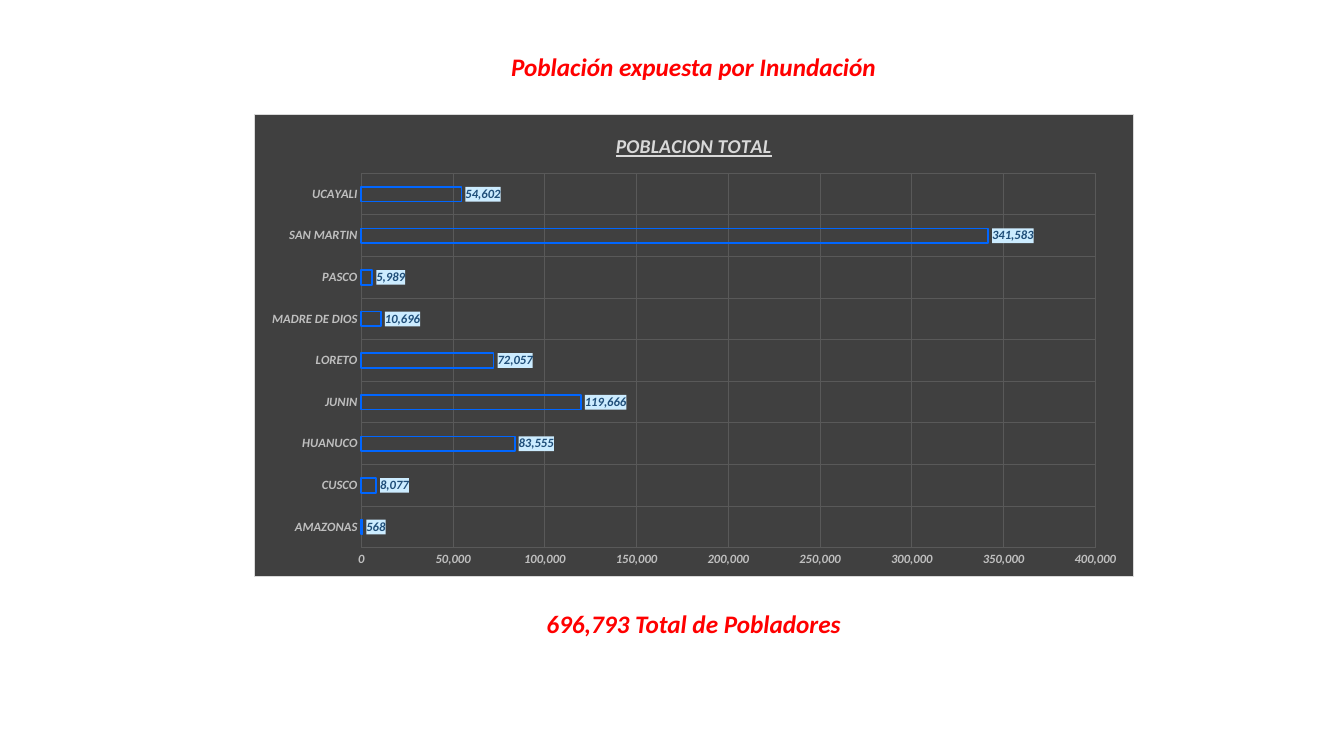
from lxml.etree import fromstring
from pptx import Presentation
from pptx.chart.data import CategoryChartData
from pptx.dml.color import RGBColor
from pptx.enum.chart import XL_CHART_TYPE, XL_LABEL_POSITION, XL_TICK_MARK
from pptx.enum.text import MSO_AUTO_SIZE, PP_ALIGN
from pptx.oxml.ns import qn
from pptx.util import Inches, Pt

HEADING = "Población expuesta por Inundación"
TOTAL = "696,793 Total de Pobladores"
CHART_TITLE = "POBLACION TOTAL"
POPULATION = {
    "AMAZONAS": 568,
    "CUSCO": 8077,
    "HUANUCO": 83555,
    "JUNIN": 119666,
    "LORETO": 72057,
    "MADRE DE DIOS": 10696,
    "PASCO": 5989,
    "SAN MARTIN": 341583,
    "UCAYALI": 54602,
}
COLORS = {
    "caption": "FF0000",
    "panel": "404040",
    "border": "D9D9D9",
    "title": "D9D9D9",
    "axis": "BFBFBF",
    "grid": "595959",
    "bar": "0066FF",
    "label": "1F4E79",
    "label_fill": "CCECFF",
}
FONT = "Calibri"
NUMBER_FORMAT = "#,##0"
WIDTH, HEIGHT = 13.33, 7.5
CENTER = 6.88
CHART_TOP, CHART_WIDTH, CHART_HEIGHT = 1.13, 8.73, 4.59
CAPTION_HEIGHT = 0.4
CAPTIONS = [(HEADING, 0.46, 3.86, False), (TOTAL, 5.99, 3.36, True)]
PLOT_SHARES = {"x": 0.122, "y": 0.128, "w": 0.835, "h": 0.811}
NAMESPACES = (
    'xmlns:c="http://schemas.openxmlformats.org/drawingml/2006/chart" '
    'xmlns:a="http://schemas.openxmlformats.org/drawingml/2006/main"'
)


def color(name):
    return RGBColor.from_string(COLORS[name])


def style_font(font, size, name):
    font.name = FONT
    font.size = Pt(size)
    font.bold = font.italic = True
    font.color.rgb = color(name)


def solid(name):
    return f'<a:solidFill><a:srgbClr val="{COLORS[name]}"/></a:solidFill>'


def area_format(fill, line=""):
    return fromstring(f"<c:spPr {NAMESPACES}>{solid(fill)}{line}</c:spPr>")


def add_caption(slide, words, top, width, wrap):
    box = slide.shapes.add_textbox(
        Inches(CENTER - width / 2), Inches(top), Inches(width), Inches(CAPTION_HEIGHT)
    )
    frame = box.text_frame
    frame.word_wrap = wrap
    frame.auto_size = MSO_AUTO_SIZE.SHAPE_TO_FIT_TEXT
    paragraph = frame.paragraphs[0]
    paragraph.alignment = PP_ALIGN.CENTER
    run = paragraph.add_run()
    run.text = words
    style_font(run.font, 18, "caption")


def style_axis(axis):
    axis.major_tick_mark = axis.minor_tick_mark = XL_TICK_MARK.NONE
    axis.format.line.fill.background()
    axis.has_major_gridlines = True
    grid = axis.major_gridlines.format.line
    grid.color.rgb = color("grid")
    grid.width = Pt(0.75)
    style_font(axis.tick_labels.font, 9, "axis")


def set_plot_area(chart):
    plot_area = chart.plots[0]._element.getparent()
    for layout in plot_area.findall(qn("c:layout")):
        plot_area.remove(layout)
    shares = "".join(f'<c:{key} val="{share}"/>' for key, share in PLOT_SHARES.items())
    plot_area.insert(0, fromstring(
        f'<c:layout {NAMESPACES}><c:manualLayout><c:layoutTarget val="inner"/>'
        f'<c:xMode val="edge"/><c:yMode val="edge"/>{shares}</c:manualLayout></c:layout>'
    ))


def add_population_chart(slide):
    data = CategoryChartData(number_format=NUMBER_FORMAT)
    data.categories = list(POPULATION)
    data.add_series("Series 1", list(POPULATION.values()))
    chart = slide.shapes.add_chart(
        XL_CHART_TYPE.BAR_CLUSTERED, Inches(CENTER - CHART_WIDTH / 2), Inches(CHART_TOP),
        Inches(CHART_WIDTH), Inches(CHART_HEIGHT), data
    ).chart
    chart.has_legend = False
    chart.font.name, chart.font.size = FONT, Pt(10)
    chart.has_title = True
    title = chart.chart_title.text_frame.paragraphs[0].add_run()
    title.text = CHART_TITLE
    style_font(title.font, 14, "title")
    title.font.underline = True

    style_axis(chart.category_axis)
    style_axis(chart.value_axis)
    scale = chart.value_axis
    scale.minimum_scale, scale.maximum_scale, scale.major_unit = 0, 400000, 50000
    scale.tick_labels.number_format = NUMBER_FORMAT
    scale.tick_labels.number_format_is_linked = False

    plot = chart.plots[0]
    plot.vary_by_categories = False
    plot.gap_width, plot.overlap = 182, -50
    bars = plot.series[0]
    bars.invert_if_negative = False
    bars.format.fill.background()
    bars.format.line.color.rgb = color("bar")
    bars.format.line.width = Pt(1.25)

    labels = bars.data_labels
    labels.show_value = True
    labels.position = XL_LABEL_POSITION.OUTSIDE_END
    labels.number_format = NUMBER_FORMAT
    labels.number_format_is_linked = False
    style_font(labels.font, 9, "label")
    labels._element.find(qn("c:txPr")).addprevious(area_format("label_fill"))

    border = f'<a:ln w="{Pt(0.75)}">{solid("border")}</a:ln>'
    chart._chartSpace.find(qn("c:txPr")).addprevious(area_format("panel", border))
    set_plot_area(chart)


def main():
    deck = Presentation()
    deck.slide_width, deck.slide_height = Inches(WIDTH), Inches(HEIGHT)
    slide = deck.slides.add_slide(deck.slide_layouts[6])
    for caption in CAPTIONS:
        add_caption(slide, *caption)
    add_population_chart(slide)
    deck.save("out.pptx")


if __name__ == "__main__":
    main()
